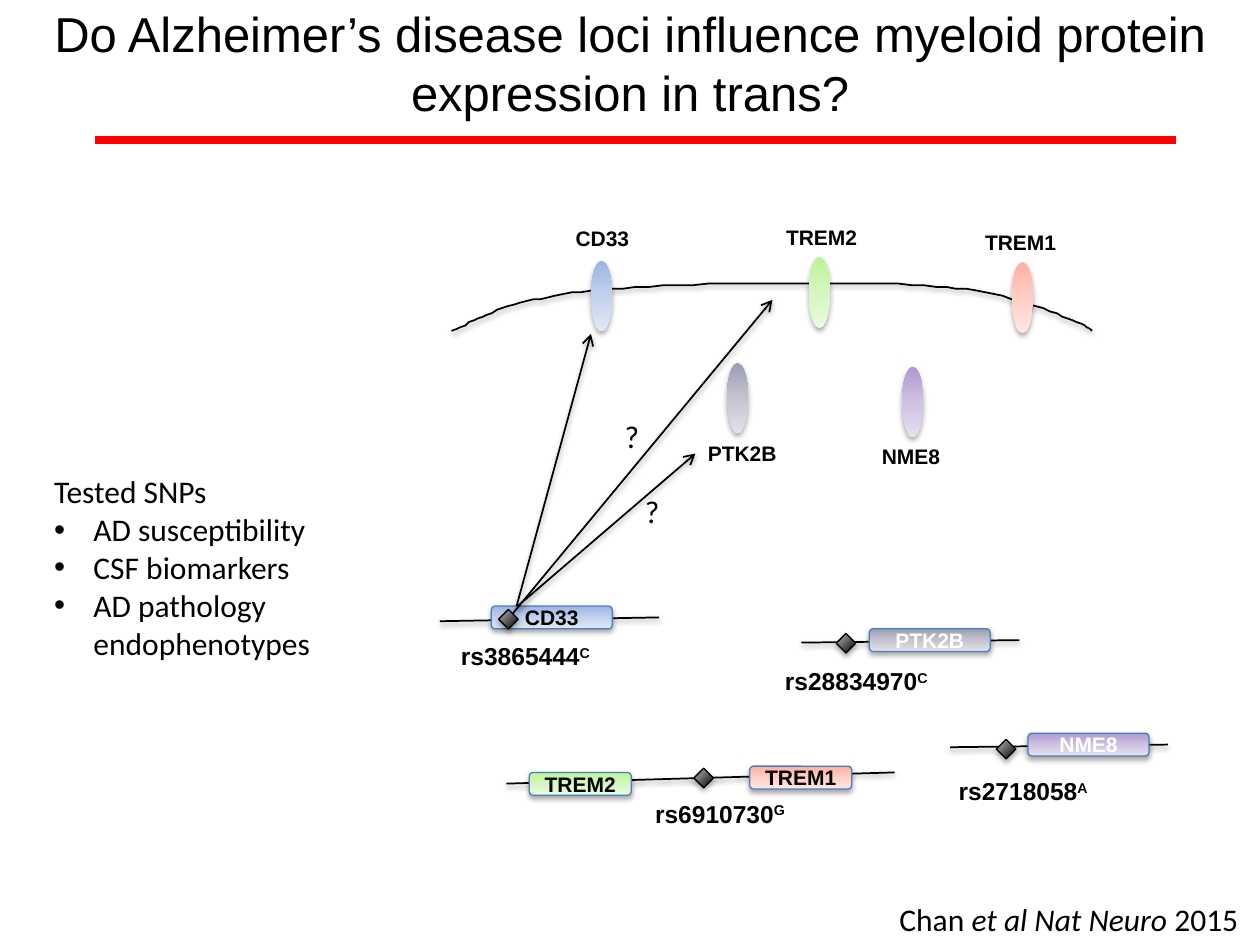
from copy import deepcopy

from lxml import etree
from pptx import Presentation
from pptx import util as u
from pptx.dml.color import RGBColor
from pptx.enum import shapes, text
from pptx.oxml import ns

Pt = u.Pt
BLACK = RGBColor(0x00, 0x00, 0x00)
WHITE = RGBColor(0xFF, 0xFF, 0xFF)
RED = RGBColor(0xFF, 0x00, 0x00)
GREY = RGBColor(0xBD, 0xBD, 0xBD)
OUTLINE = RGBColor(0x4B, 0x7E, 0xBC)

# Gradient of each gene: top, middle, bottom
GENES = {
    gene: [RGBColor.from_string(c) for c in stops.split()]
    for gene, stops in {
        "TREM1": "FFAFA0 FFCEC5 FFE7E3",
        "TREM2": "BEF297 D5F6C0 EAFAE0",
        "CD33": "9AB5E4 C2D1ED E1E8F5",
        "NME8": "B197D2 CEC1E2 E7E1F0",
        "PTK2B": "9B9DB1 C3C4CF E2E2E7",
    }.items()
}


def sub(parent, tag, **attrs):
    return etree.SubElement(parent, ns.qn(tag), attrs)


def bezier(p0, p1, p2, p3, steps=24):
    """Points along a cubic curve, without its start."""
    for i in range(1, steps + 1):
        t = i / steps
        m = 1 - t
        yield tuple(m**3 * a + 3 * m * m * t * b + 3 * m * t * t * c + t**3 * d
                    for a, b, c, d in zip(p0, p1, p2, p3))


class Diagram:
    heading = "Arial"
    body = "Calibri"

    def __init__(self, slide):
        self.shapes = slide.shapes

    def shadow(self, s, dist=1.8, alpha=35):
        spPr = s._element.spPr
        effects = spPr.find(ns.qn("a:effectLst"))
        if effects is None:
            effects = sub(spPr, "a:effectLst")
        if dist:
            shade = sub(effects, "a:outerShdw", blurRad=str(Pt(3.1)), dist=str(Pt(dist)),
                        dir="5400000", rotWithShape="0")
            color = sub(shade, "a:srgbClr", val="000000")
            sub(color, "a:alpha", val=str(alpha * 1000))

    def font(self, r, size, name, color=BLACK, bold=False, italic=False):
        f = r.font
        f.size, f.name, f.bold, f.italic = Pt(size), name, bold, italic
        f.color.rgb = color

    def line(self, start, end, color=BLACK, width=1, arrow=False, shadow=True):
        s = self.shapes.add_connector(shapes.MSO_CONNECTOR.STRAIGHT,
                                      *(Pt(v) for v in start + end))
        s.line.color.rgb = color
        s.line.width = Pt(width)
        if arrow:
            sub(s.line._get_or_add_ln(), "a:tailEnd", type="arrow")
        self.shadow(s, 1.6 if shadow else 0, 38)

    def curve(self, points):
        builder = self.shapes.build_freeform(*points[0], scale=Pt(1))
        builder.add_line_segments(points[1:], close=False)
        s = builder.convert_to_shape()
        s.fill.background()
        s.line.color.rgb = BLACK
        s.line.width = Pt(1)
        s.shadow.inherit = False
        self.shadow(s, 1.6, 38)

    def shape(self, kind, x, y, w, h, colors, angle=270, outline=None):
        s = self.shapes.add_shape(kind, Pt(x), Pt(y), Pt(w), Pt(h))
        s.fill.gradient()
        s.fill.gradient_angle = angle
        if len(colors) == 3:
            first = s._element.spPr.find(".//" + ns.qn("a:gs"))
            middle = deepcopy(first)
            middle.set("pos", "50000")
            first.addnext(middle)
        for stop, color in zip(s.fill.gradient_stops, colors):
            stop.color.rgb = color
        if outline is None:
            s.line.fill.background()
        else:
            s.line.color.rgb = outline
            s.line.width = Pt(0.75)
        s.shadow.inherit = False
        self.shadow(s)
        return s

    def protein(self, gene, x, y):
        self.shape(shapes.MSO_SHAPE.OVAL, x, y, 12.2, 40.3, GENES[gene])

    def gene(self, name, x, y, w, color=BLACK):
        s = self.shape(shapes.MSO_SHAPE.ROUNDED_RECTANGLE, x, y, w, 13,
                       GENES[name], outline=OUTLINE)
        tf = s.text_frame
        tf.margin_left = tf.margin_right = 0
        tf.vertical_anchor = text.MSO_ANCHOR.MIDDLE
        p = tf.paragraphs[0]
        p.text = name
        p.alignment = text.PP_ALIGN.CENTER
        self.font(p.runs[0], 12, self.heading, color, bold=True)

    def marker(self, x, y):
        s = self.shape(shapes.MSO_SHAPE.RECTANGLE, x, y, 7.9, 7.9,
                       [BLACK, GREY], angle=90, outline=BLACK)
        s.rotation = 315

    def text(self, content, x, y, w, h, size, name, bold=False, wrap=True):
        s = self.shapes.add_textbox(Pt(x), Pt(y), Pt(w), Pt(h))
        tf = s.text_frame
        tf.word_wrap = wrap
        tf.text = content
        for p in tf.paragraphs:
            self.font(p.runs[0], size, name, bold=bold)
        return tf

    def add_run(self, p, content, size, name, **style):
        r = p.add_run()
        r.text = content
        self.font(r, size, name, **style)
        return r

    def snp(self, name, allele, x, y, w):
        tf = self.text(name, x, y, w, 24.5, 14, self.heading, bold=True, wrap=False)
        r = self.add_run(tf.paragraphs[0], allele, 14, self.heading, bold=True)
        r.font._element.set("baseline", "30000")

    def bullet(self, p):
        pPr = p._p.get_or_add_pPr()
        pPr.set("marL", str(Pt(22.5)))
        pPr.set("indent", str(Pt(-22.5)))
        sub(pPr, "a:buFont", typeface="Arial")
        sub(pPr, "a:buChar", char="•")


def main():
    prs = Presentation()
    prs.slide_width, prs.slide_height = Pt(720), Pt(540)
    d = Diagram(prs.slides.add_slide(prs.slide_layouts[6]))

    # Title and rule
    tf = d.text("Do Alzheimer’s disease loci influence myeloid protein expression in trans?",
                0, -9.4, 720, 90, 28, d.heading)
    tf.vertical_anchor = text.MSO_ANCHOR.MIDDLE
    tf.paragraphs[0].alignment = text.PP_ALIGN.CENTER
    d.line((54, 79.9), (672, 79.9), RED, 4.5, shadow=False)

    # Cell membrane
    left, shoulder, right, end = (258.5, 189.2), (343.4, 165.6), (540.7, 164), (624.2, 188.8)
    d.curve([left,
             *bezier(left, (277.2, 179.3), (296.6, 169.9), shoulder),
             *bezier(shoulder, (390.2, 161.3), (493.9, 159.8), right),
             *bezier(right, (587.5, 167.8), end, end)])

    # Proteins and their labels
    for gene, x, y, label_x, label_y in (
            ("TREM1", 578.2, 149.8, 555.8, 127.4), ("TREM2", 462.2, 146.9, 442.1, 124.6),
            ("CD33", 337.7, 149, 321.8, 125.3), ("NME8", 515.5, 209.5, 496.8, 249.8),
            ("PTK2B", 415.4, 207.4, 397.4, 248.4)):
        d.protein(gene, x, y)
        d.text(gene, label_x, label_y, 90, 21.6, 12, d.heading, bold=True)

    # Tested SNPs
    tf = d.text("Tested SNPs\nAD susceptibility\nCSF biomarkers\nAD pathology endophenotypes",
                23.8, 266.4, 173.5, 116.6, 18, d.body)
    for p in tf.paragraphs[1:]:
        d.bullet(p)

    # Loci: chromosome line, genes, SNP marker and SNP name
    for start, finish, genes, marker, snp in (
            ((376.6, 352.8), (251.3, 355), [("CD33", 280.8, 346.3, 69.1)],
             (286.6, 349.9), ("rs3865444", "C", 256.3, 362.9, 89.3)),
            ((289.4, 447.8), (511.2, 441.4),
             [("TREM1", 428.4, 437.8, 58.3), ("TREM2", 302.4, 441.4, 58.3)],
             (398.2, 440.6), ("rs6910730", "G", 367.2, 452.9, 90)),
            ((582.5, 365.8), (457.9, 367.2), [("PTK2B", 496.8, 359.3, 69.1, WHITE)],
             (479.5, 363.6), ("rs28834970", "C", 441.4, 377.3, 97.2)),
            ((667.4, 425.5), (542.9, 427), [("NME8", 587.5, 419, 69.1, WHITE)],
             (571, 424.1), ("rs2718058", "A", 540.7, 439.9, 92.9))):
        d.line(start, finish)
        for gene in genes:
            d.gene(*gene)
        d.marker(*marker)
        d.snp(*snp)

    # Possible effects of the CD33 locus
    for start, finish in (((295.2, 346.3), (337.7, 190.8)),
                          ((293, 350.6), (441.4, 171.4)),
                          ((295.9, 346.3), (397.4, 259.2))):
        d.line(start, finish, arrow=True)
    for x, y in ((349.9, 234.7), (361.4, 277.9)):
        d.text("?", x, y, 17.3, 28.8, 18, d.body)

    # Citation
    p = d.text("Chan ", 506.9, 510.5, 230.4, 28.8, 18, d.body).paragraphs[0]
    d.add_run(p, "et al Nat Neuro ", 18, d.body, italic=True)
    d.add_run(p, "2015", 18, d.body)

    prs.save("out.pptx")


if __name__ == "__main__":
    main()
